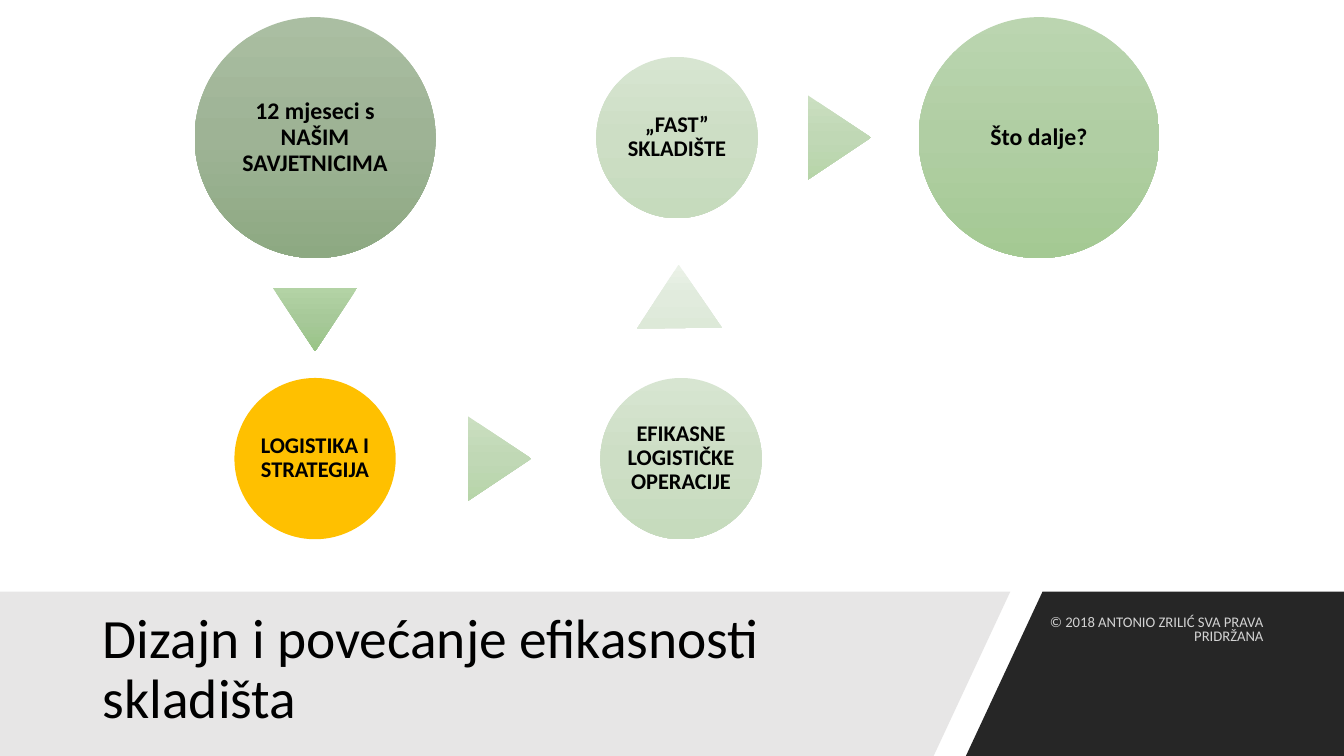
from copy import deepcopy
from dataclasses import dataclass

from lxml.etree import SubElement
from pptx import Presentation
from pptx.dml.color import RGBColor
from pptx.enum.shapes import MSO_SHAPE
from pptx.enum.text import MSO_ANCHOR, MSO_AUTO_SIZE, PP_ALIGN
from pptx.oxml.ns import qn
from pptx.util import Inches, Pt


@dataclass(frozen=True)
class Theme:
    font: str = "Calibri"
    ink: str = "000000"
    light: str = "FFFFFF"
    dark: str = "262626"
    gray: str = "E7E6E6"
    gold: tuple = ("FFC000",)
    sage: tuple = ("AABEA2", "9EB395", "8DA982")
    leaf: tuple = ("BBD5B0", "B0CEA3", "A4C993")
    pale: tuple = ("D7E5D1", "CDDEC5", "C6DBBD")
    down: tuple = ("B3D3A5", "A7C999", "99C486")
    right: tuple = ("CBDFC1", "C0D8B5", "B7D5A9")
    up: tuple = ("EBF2E8", "E1EBDD", "DDE9D8")
    title: float = 39.6
    large: float = 17
    small: float = 16
    note: float = 10.5


THEME = Theme()


def write(shape, text, size, color=THEME.ink, bold=False,
          align=PP_ALIGN.LEFT, lines=0.9, inset=None, alpha=None):
    frame = shape.text_frame
    frame.word_wrap = True
    frame.auto_size = MSO_AUTO_SIZE.NONE
    frame.vertical_anchor = MSO_ANCHOR.MIDDLE
    if inset is not None:
        frame.margin_left = frame.margin_right = Inches(inset)
        frame.margin_top = frame.margin_bottom = Inches(inset)
    para = frame.paragraphs[0]
    para.alignment = align
    para.line_spacing = lines
    run = para.add_run()
    run.text = text
    font = run.font
    font.name, font.size, font.bold = THEME.font, Pt(size), bold
    font.color.rgb = RGBColor.from_string(color)
    if alpha is not None:
        tone = run._r.rPr.find(".//" + qn("a:srgbClr"))
        SubElement(tone, qn("a:alpha")).set("val", str(alpha * 1000))


def paint(shape, colors):
    """Fill with one color, or with three from top to bottom."""
    shape.shadow.inherit = False
    shape.line.fill.background()
    fill = shape.fill
    if len(colors) == 1:
        fill.solid()
        fill.fore_color.rgb = RGBColor.from_string(colors[0])
        return
    fill.gradient()
    fill.gradient_angle = 270
    grad = shape._element.spPr.find(qn("a:gradFill"))
    grad.set("rotWithShape", "0")
    stops = grad.find(qn("a:gsLst"))
    stops.insert(1, deepcopy(stops[0]))
    for index, (stop, color) in enumerate(zip(fill.gradient_stops, colors)):
        stop.position = index / 2
        stop.color.rgb = RGBColor.from_string(color)


def place(slide, kind, x, y, width, height):
    """Add a preset shape centered on x, y."""
    return slide.shapes.add_shape(
        kind, Inches(x - width / 2), Inches(y - height / 2),
        Inches(width), Inches(height))


def step(slide, x, y, size, text, colors, points):
    disc = place(slide, MSO_SHAPE.OVAL, x, y, size, size)
    paint(disc, colors)
    write(disc, text, points, bold=True, align=PP_ALIGN.CENTER, inset=0.02)


def arrow(slide, x, y, turn, colors):
    head = place(slide, MSO_SHAPE.ISOSCELES_TRIANGLE, x, y, 0.84, 0.63)
    head.rotation = turn
    paint(head, colors)


def flow(slide, left, top, width, height):
    """Draw the five steps, and the arrows between them, in the given box."""
    big, small = 2.39, 1.6
    first, last = left + big / 2, left + width - big / 2
    mid = (first + last) / 2
    high, low = top + big / 2, top + height - small / 2
    steps = [
        (first, high, big, "12 mjeseci s NAŠIM SAVJETNICIMA", THEME.sage, THEME.large),
        (first, low, small, "LOGISTIKA I STRATEGIJA", THEME.gold, THEME.small),
        (mid + 0.04, low, small, "EFIKASNE LOGISTIČKE OPERACIJE", THEME.pale, THEME.small),
        (mid, high, small, "„FAST” SKLADIŠTE", THEME.pale, THEME.small),
        (last, high, big, "Što dalje?", THEME.leaf, THEME.large),
    ]
    arrows = [
        (first, top + 3, 180, THEME.down),
        (first + 1.83, low, 90, THEME.right),
        (mid + 0.02, top + 2.77, 359.3, THEME.up),
        (mid + 1.61, high, 90, THEME.right),
    ]
    for item in steps:
        step(slide, *item)
    for item in arrows:
        arrow(slide, *item)


def panel(slide, points, color):
    (x, y), *rest = [(Inches(x), Inches(y)) for x, y in points]
    build = slide.shapes.build_freeform(x, y)
    build.add_line_segments(rest, close=True)
    paint(build.convert_to_shape(), (color,))


def footer(slide, left, top, width, height):
    """Draw the two slanted panels with the title and the copyright line."""
    right, base, slant = left + width, top + height, 0.76
    panel(slide, [(left + 10.34, top), (right, top), (right, base),
                  (left + 10.34 - slant, base)], THEME.dark)
    panel(slide, [(left, top), (left + 10.02, top),
                  (left + 10.02 - slant, base), (left, base)], THEME.gray)
    title = slide.shapes.title
    title.left, title.top = Inches(left + 0.92), Inches(top + 0.18)
    title.width, title.height = Inches(8.44), Inches(1.2)
    write(title, "Dizajn i povećanje efikasnosti skladišta", THEME.title)
    slide.shapes._spTree.append(title._element)
    note = slide.shapes.add_textbox(
        Inches(left + 10.3), Inches(top + 0.18), Inches(2.33), Inches(0.4))
    write(note, "© 2018 ANTONIO ZRILIĆ SVA PRAVA PRIDRŽANA", THEME.note,
          color=THEME.light, align=PP_ALIGN.RIGHT, lines=0.8, alpha=80)


def main():
    deck = Presentation()
    deck.slide_width, deck.slide_height = Inches(13.33), Inches(7.5)
    slide = deck.slides.add_slide(deck.slide_layouts[5])
    footer(slide, 0, 5.87, 13.33, 1.63)
    flow(slide, 1.93, 0.17, 9.57, 5.18)
    deck.save("out.pptx")


if __name__ == "__main__":
    main()
